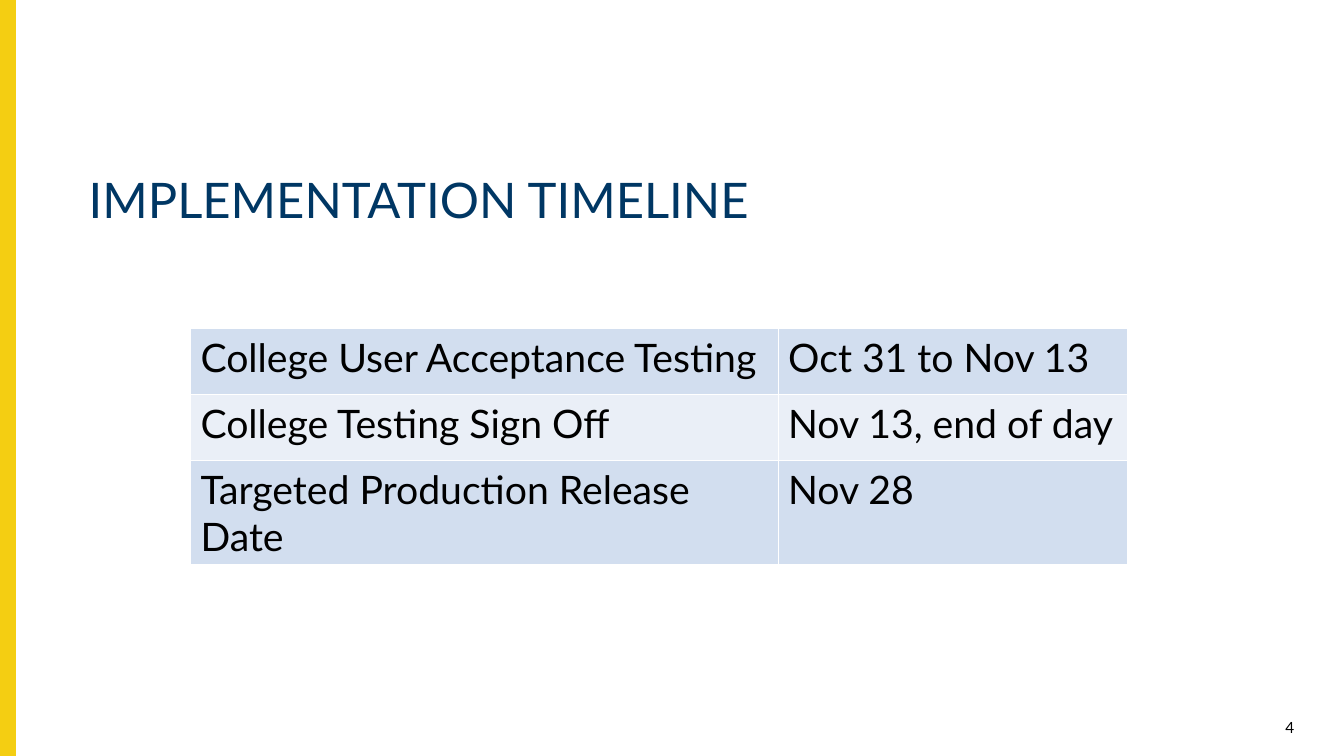
"""Build the implementation timeline slide."""
from lxml import etree
from pptx import Presentation
from pptx.dml.color import RGBColor
from pptx.enum.shapes import MSO_SHAPE
from pptx.enum.text import MSO_ANCHOR, MSO_AUTO_SIZE, PP_ALIGN
from pptx.oxml.ns import qn
from pptx.util import Cm, Pt

RECT = MSO_SHAPE.RECTANGLE
TOP, MIDDLE = MSO_ANCHOR.TOP, MSO_ANCHOR.MIDDLE
LEFT, RIGHT = PP_ALIGN.LEFT, PP_ALIGN.RIGHT
NO_FIT = MSO_AUTO_SIZE.NONE

TITLE = "IMPLEMENTATION TIMELINE"
PAGE = "4"
MILESTONES = [
    ("College User Acceptance Testing", "Oct 31 to Nov 13"),
    ("College Testing Sign Off", "Nov 13, end of day"),
    ("Targeted Production Release Date", "Nov 28"),
]
COL_WIDTHS = (14.81, 8.8)
ROW_HEIGHT = 1.66
BANDS = ("D2DEEF", "EAEFF7")
FONT = "Lato"
YELLOW, NAVY, BLACK, WHITE = "F4CE12", "003764", "000000", "FFFFFF"


def rgb(value):
    return RGBColor.from_string(value)


def write(tf, text, size, color, align=LEFT):
    tf.text = text
    p = tf.paragraphs[0]
    p.alignment = align
    p.font.name, p.font.size = FONT, Pt(size)
    p.font.color.rgb = rgb(color)
    return p


def add_borders(cell, color):
    tc_pr = cell._tc.get_or_add_tcPr()
    for side in ("a:lnL", "a:lnR", "a:lnT", "a:lnB"):
        ln = etree.SubElement(tc_pr, qn(side), w=str(Pt(1)))
        fill = etree.SubElement(ln, qn("a:solidFill"))
        etree.SubElement(fill, qn("a:srgbClr"), val=color)


def add_title(s):
    sp = s.shapes.title
    sp.left, sp.top, sp.width, sp.height = Cm(1.98), Cm(4.32), Cm(30.89), Cm(2.21)
    tf = sp.text_frame
    tf.word_wrap, tf.auto_size, tf.vertical_anchor = True, NO_FIT, TOP
    write(tf, TITLE, 35, NAVY).line_spacing = 0.9


def add_timeline(s):
    table = s.shapes.add_table(
        len(MILESTONES), len(COL_WIDTHS), Cm(4.8), Cm(8.28),
        Cm(sum(COL_WIDTHS)), Cm(ROW_HEIGHT * len(MILESTONES))).table
    table.first_row = False
    for col, width in zip(table.columns, COL_WIDTHS):
        col.width = Cm(width)
    for i, milestone in enumerate(MILESTONES):
        table.rows[i].height = Cm(ROW_HEIGHT)
        for j, text in enumerate(milestone):
            cell = table.cell(i, j)
            add_borders(cell, WHITE)
            cell.fill.solid()
            cell.fill.fore_color.rgb = rgb(BANDS[i % 2])
            write(cell.text_frame, text, 28, BLACK)


def main():
    prs = Presentation()
    prs.slide_width, prs.slide_height = Cm(33.87), Cm(19.05)
    s = prs.slides.add_slide(prs.slide_layouts[5])

    bar = s.shapes.add_shape(RECT, 0, 0, Cm(0.38), prs.slide_height)
    bar.shadow.inherit = False
    bar.fill.solid()
    bar.fill.fore_color.rgb = bar.line.color.rgb = rgb(YELLOW)
    bar.line.width = Pt(1)

    add_title(s)
    add_timeline(s)

    number = s.shapes.add_textbox(Cm(31.14), Cm(18.01), Cm(1.73), Cm(0.66))
    tf = number.text_frame
    tf.word_wrap, tf.vertical_anchor = True, MIDDLE
    write(tf, PAGE, 11, BLACK, RIGHT)

    prs.save("out.pptx")


if __name__ == "__main__":
    main()
